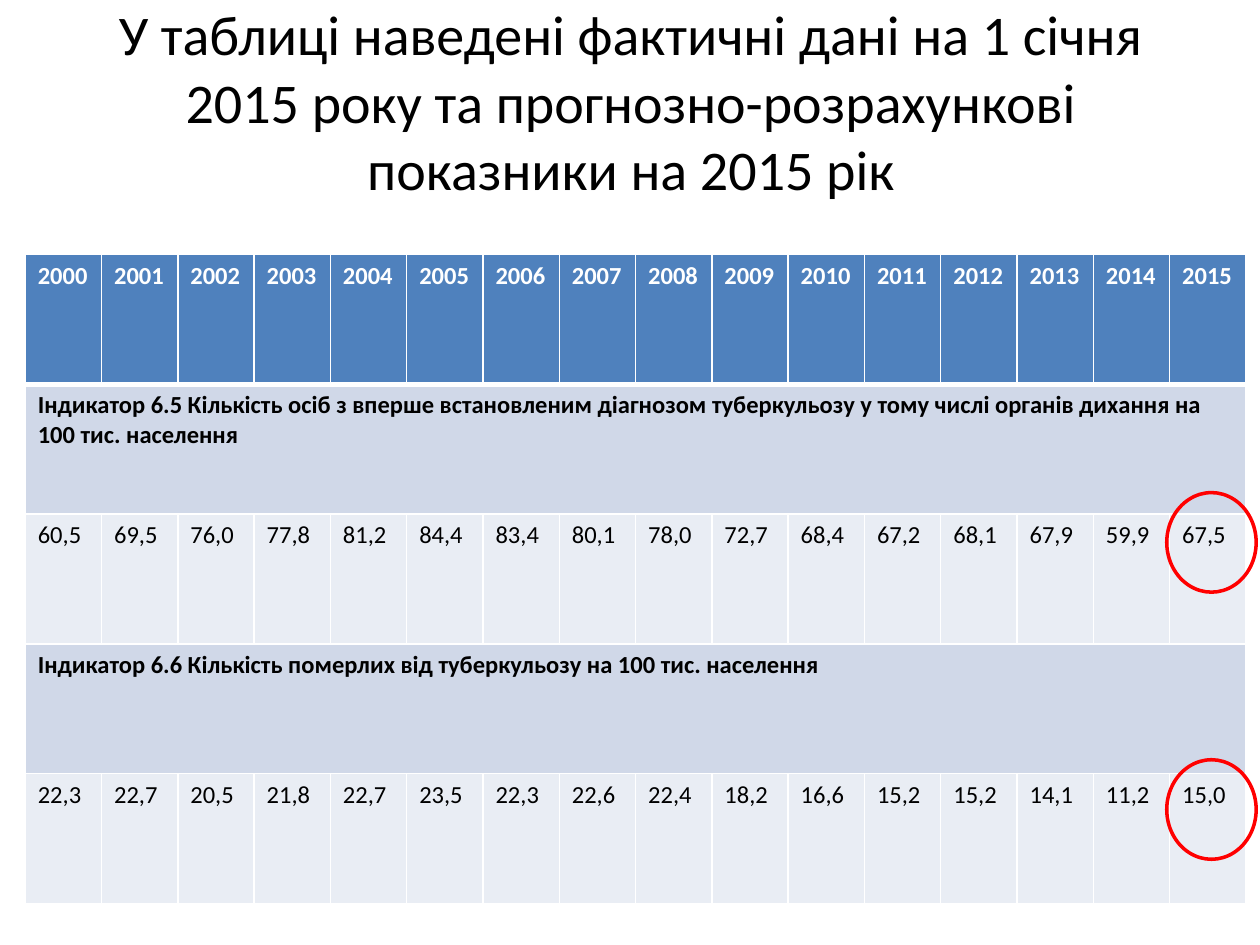
from lxml.etree import SubElement
from pptx import Presentation
from pptx.dml.color import RGBColor
from pptx.enum.shapes import MSO_SHAPE
from pptx.enum.text import MSO_ANCHOR, PP_ALIGN
from pptx.oxml.ns import qn
from pptx.util import Inches, Pt

# Content
TITLE = ("У таблиці наведені фактичні дані на 1 січня 2015 року "
         "та прогнозно-розрахункові показники на 2015 рік")
YEARS = [str(year) for year in range(2000, 2016)]
INDICATORS = [
    ("Індикатор 6.5 Кількість осіб з вперше встановленим діагнозом туберкульозу "
     "у тому числі органів дихання на 100 тис. населення",
     "60,5 69,5 76,0 77,8 81,2 84,4 83,4 80,1 78,0 72,7 68,4 67,2 68,1 67,9 59,9 67,5"),
    ("Індикатор 6.6 Кількість померлих від туберкульозу на 100 тис. населення",
     "22,3 22,7 20,5 21,8 22,7 23,5 22,3 22,6 22,4 18,2 16,6 15,2 15,2 14,1 11,2 15,0"),
]

FONT = "Calibri"
BLACK, WHITE, RED = "000000", "FFFFFF", "FF0000"
HEADER_FILL, LABEL_FILL, VALUE_FILL = "4F81BD", "D0D8E8", "E9EDF4"

# Layout in inches
TABLE_LEFT, TABLE_TOP, TABLE_WIDTH, ROW_HEIGHT = 0.2, 2.02, 9.69, 1.03
RING_LEFT, RING_TOPS, RING_WIDTH, RING_HEIGHT = 9.26, (3.91, 6.03), 0.71, 0.79


def color(value):
    return RGBColor.from_string(value)


def format_text(text_frame, size, text_color, bold=False):
    for paragraph in text_frame.paragraphs:
        for run in paragraph.runs:
            run.font.name = FONT
            run.font.size = Pt(size)
            run.font.bold = bold
            run.font.color.rgb = color(text_color)


def add_borders(cell, top, bottom):
    properties = cell._tc.get_or_add_tcPr()
    for side, width in (("L", 1), ("R", 1), ("T", top), ("B", bottom)):
        line = SubElement(properties, qn(f"a:ln{side}"), w=str(Pt(width)))
        fill = SubElement(line, qn("a:solidFill"))
        SubElement(fill, qn("a:srgbClr"), val=WHITE)


def add_title(slide):
    box = slide.shapes.add_textbox(Inches(0.51), Inches(0.44), Inches(9), Inches(1.25))
    text_frame = box.text_frame
    text_frame.word_wrap = True
    text_frame.vertical_anchor = MSO_ANCHOR.MIDDLE
    text_frame.margin_bottom = Inches(0.58)  # raises the centred lines
    text_frame.text = TITLE
    text_frame.paragraphs[0].alignment = PP_ALIGN.CENTER
    format_text(text_frame, 32, BLACK)


def add_indicator_table(slide):
    # Each row: texts, fill, text colour, bold
    rows = [(YEARS, HEADER_FILL, WHITE, True)]
    for label, values in INDICATORS:
        rows.append(([label], LABEL_FILL, BLACK, True))
        rows.append((values.split(), VALUE_FILL, BLACK, False))

    table = slide.shapes.add_table(
        len(rows), len(YEARS), Inches(TABLE_LEFT), Inches(TABLE_TOP),
        Inches(TABLE_WIDTH), Inches(ROW_HEIGHT * len(rows))).table
    for column in table.columns:
        column.width = Inches(TABLE_WIDTH / len(YEARS))

    for index, (texts, fill, text_color, bold) in enumerate(rows):
        table.rows[index].height = Inches(ROW_HEIGHT)
        cells = list(table.rows[index].cells)
        for cell in cells:
            add_borders(cell, top=3 if index == 1 else 1, bottom=3 if index == 0 else 1)
            cell.fill.solid()
            cell.fill.fore_color.rgb = color(fill)
        for cell, text in zip(cells, texts):
            cell.text_frame.text = text
            format_text(cell.text_frame, 14, text_color, bold)
        if len(texts) == 1:
            cells[0].merge(cells[-1])


def add_rings(slide):
    for top in RING_TOPS:
        ring = slide.shapes.add_shape(
            MSO_SHAPE.OVAL, Inches(RING_LEFT), Inches(top),
            Inches(RING_WIDTH), Inches(RING_HEIGHT))
        ring.shadow.inherit = False
        ring.fill.background()
        ring.line.color.rgb = color(RED)
        ring.line.width = Pt(2)


def main():
    presentation = Presentation()
    presentation.slide_width = Inches(10)
    presentation.slide_height = Inches(7.5)
    slide = presentation.slides.add_slide(presentation.slide_layouts[6])
    add_title(slide)
    add_indicator_table(slide)
    add_rings(slide)  # forecast values for 2015
    presentation.save("out.pptx")


if __name__ == "__main__":
    main()
